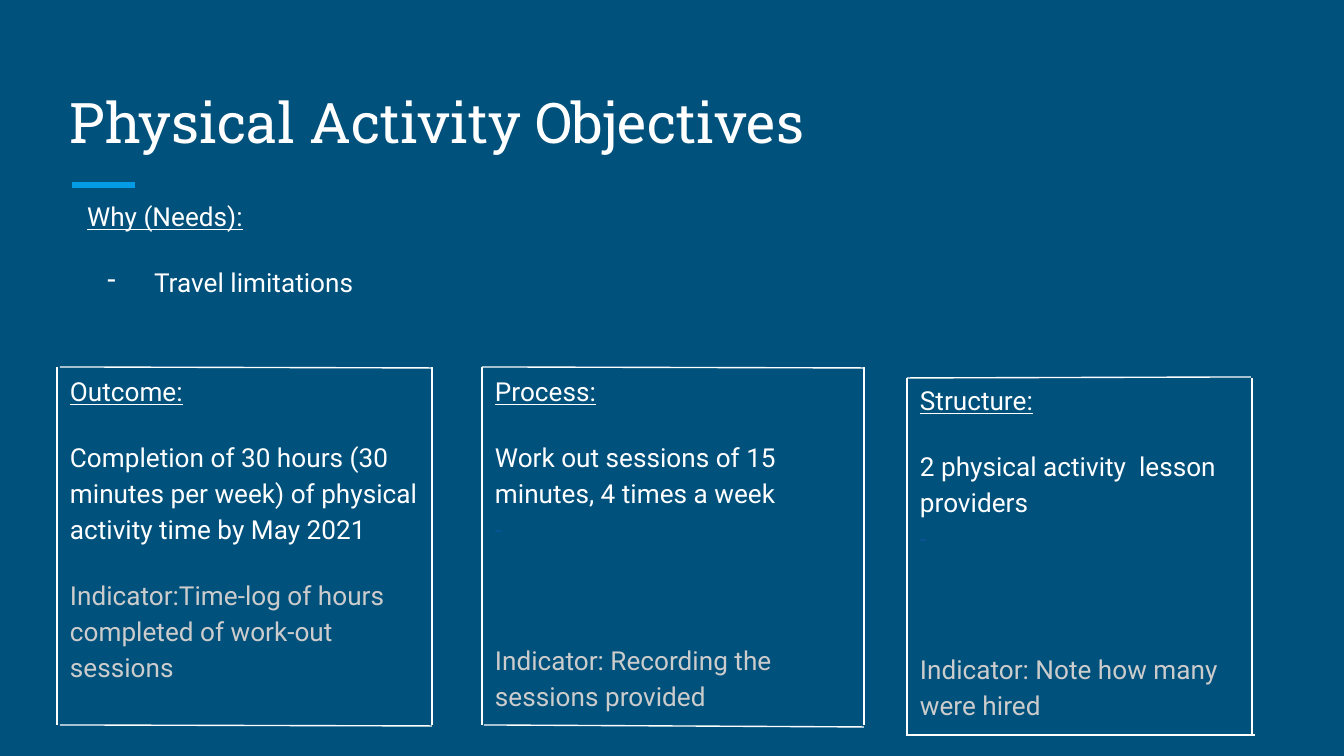
"""Build the slide of physical activity objectives."""
from lxml import etree
from pptx import Presentation, util as u
from pptx.dml.color import RGBColor
from pptx.enum import shapes, text
from pptx.oxml.ns import qn

PX = 9144000 / 1344
NAVY = RGBColor(0x00, 0x51, 0x7C)
SKY = RGBColor(0x03, 0x9B, 0xE5)
WHITE = RGBColor(0xFF, 0xFF, 0xFF)
GREY = RGBColor(0xCC, 0xCC, 0xCC)
BLUE = RGBColor(0x0B, 0x53, 0x94)

deck = Presentation()
deck.slide_width, deck.slide_height = round(1344 * PX), round(756 * PX)
slide = deck.slides.add_slide(deck.slide_layouts[6])
slide.background.fill.solid()
slide.background.fill.fore_color.rgb = NAVY


def write(words, box=None, at=None, color=WHITE, size=14, face="Roboto",
          under=False, before=0, space=1.15, anchor=text.MSO_ANCHOR.TOP):
    if box is None:
        box = slide.shapes.add_textbox(*[round(n * PX) for n in at])
        frame = box.text_frame
        frame.word_wrap = True
        frame.vertical_anchor = anchor
        frame.margin_left = frame.margin_right = round(13 * PX)
        frame.margin_top = frame.margin_bottom = round(13 * PX)
        para = frame.paragraphs[0]
    else:
        para = box.text_frame.add_paragraph()
    para.line_spacing = space
    para.space_before = u.Pt(before)
    run = para.add_run()
    run.text = words
    run.font.name, run.font.size = face, u.Pt(size)
    run.font.underline = under
    run.font.color.rgb = color
    return box


def rule(x1, y1, x2, y2, color=WHITE, width=0.75):
    ends = [round(n * PX) for n in (x1, y1, x2, y2)]
    line = slide.shapes.add_connector(shapes.MSO_CONNECTOR.STRAIGHT, *ends)
    line.line.color.rgb = color
    line.line.width = u.Pt(width)
    etree.SubElement(line._element.spPr, qn("a:effectLst"))


rule(72, 185, 135, 185, SKY, 3)
write("Physical Activity Objectives", at=(57, 67, 1230, 101), size=30,
      face="Roboto Slab", space=1, anchor=text.MSO_ANCHOR.BOTTOM)

needs = write("Why (Needs):", at=(74, 183, 1212, 146), under=True)
write("Travel limitations", needs, before=16)
props = needs.text_frame.paragraphs[1]._p.get_or_add_pPr()
props.set("marL", str(round(67 * PX)))
props.set("indent", str(round(-47 * PX)))
tint = etree.SubElement(props, qn("a:buClr"))
etree.SubElement(tint, qn("a:srgbClr")).set("val", str(WHITE))
etree.SubElement(props, qn("a:buChar")).set("char", "-")

cards = [
    (57, 358, 349, "Outcome:",
     "Completion of 30 hours (30 minutes per week) of physical activity time by May 2021",
     "Indicator:Time-log of hours completed of work-out sessions", False),
    (482, 358, 349, "Process:", "Work out sessions of 15 minutes, 4 times a week",
     "Indicator: Recording the sessions provided", True),
    (907, 367, 321, "Structure:", "2 physical activity  lesson providers",
     "Indicator: Note how many were hired", True),
]
for x, y, high, head, goal, sign, dash in cards:
    card = write(head, at=(x, y, 380, high), under=True)
    write(goal, card, before=16)
    if dash:
        write("-", card, color=BLUE)
    write(sign, card, color=GREY, before=51 if dash else 16)

for x, y in [(57, 367), (432, 367), (482, 367), (864, 367), (907, 378), (1252, 378)]:
    rule(x, y, x, y + 358)

for edge in [(60, 367, 432, 368), (60, 725, 432, 726),
             (482, 367, 864, 368), (484, 725, 864, 727),
             (907, 378, 1251, 377), (908, 735, 1255, 735)]:
    rule(*edge)

deck.save("out.pptx")
